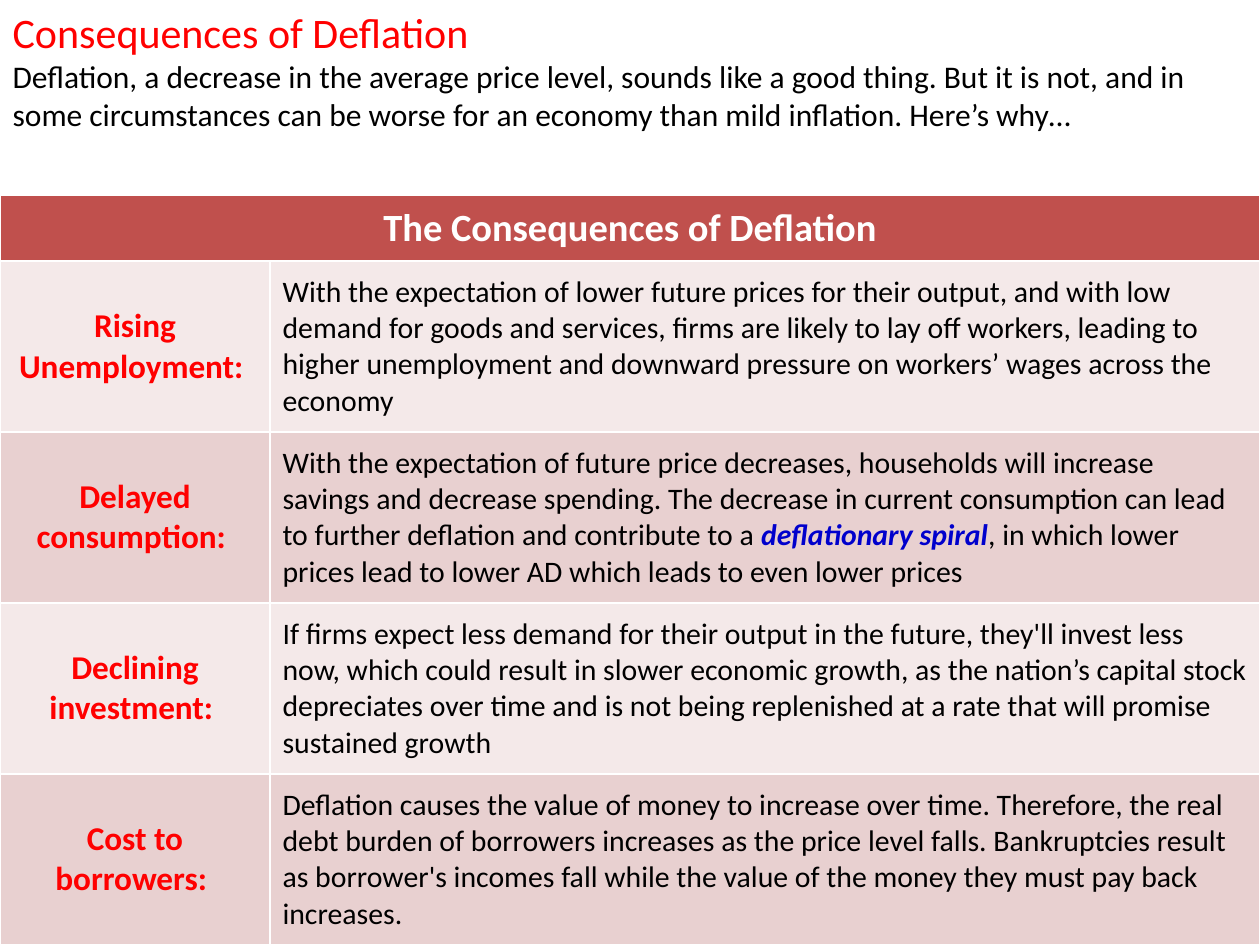
from lxml.etree import SubElement
from pptx import Presentation
from pptx.dml.color import RGBColor
from pptx.enum.text import MSO_ANCHOR, MSO_AUTO_SIZE, PP_ALIGN
from pptx.oxml.ns import qn
from pptx.util import Pt

PX = 914400 // 126
FONT = "Calibri"
RED, BLACK, WHITE, BLUE = "FF0000", "000000", "FFFFFF", "0000CC"
HEADER_FILL = "C0504D"
ROW_FILLS = ["F4E9E9", "E8D0D0"]

HEADING = "Consequences of Deflation"
INTRO = (
    "Deflation, a decrease in the average price level, sounds like a good thing. "
    "But it is not, and in some circumstances can be worse for an economy than "
    "mild inflation. Here’s why…"
)
TABLE_HEADER = "The Consequences of Deflation"
KEY_TERM = "deflationary spiral"
CONSEQUENCES = [
    (
        "Rising Unemployment: ",
        "With the expectation of lower future prices for their output, and with low "
        "demand for goods and services, firms are likely to lay off workers, leading "
        "to higher unemployment and downward pressure on workers’ wages across the economy",
    ),
    (
        "Delayed consumption: ",
        "With the expectation of future price decreases, households will increase "
        "savings and decrease spending. The decrease in current consumption can lead "
        "to further deflation and contribute to a deflationary spiral, in which lower "
        "prices lead to lower AD which leads to even lower prices",
    ),
    (
        "Declining investment: ",
        "If firms expect less demand for their output in the future, they'll invest "
        "less now, which could result in slower economic growth, as the nation’s "
        "capital stock depreciates over time and is not being replenished at a rate "
        "that will promise sustained growth",
    ),
    (
        "Cost to borrowers: ",
        "Deflation causes the value of money to increase over time. Therefore, the "
        "real debt burden of borrowers increases as the price level falls. "
        "Bankruptcies result as borrower's incomes fall while the value of the money "
        "they must pay back increases.",
    ),
]


def px(length):
    return length * PX


def color(value):
    return RGBColor.from_string(value)


def format_span(span, size, ink, bold=False, italic=False):
    span.font.name = FONT
    span.font.size = Pt(size)
    span.font.color.rgb = color(ink)
    span.font.bold = bold
    span.font.italic = italic


def write_para(para, text, size, ink, bold=False, align=PP_ALIGN.LEFT):
    para.text = text
    para.alignment = align
    format_span(para.runs[0], size, ink, bold)


def write_description(para, text):
    before, term, after = text.partition(KEY_TERM)
    write_para(para, before, 17, BLACK)
    if term:
        for part, ink, strong in [(term, BLUE, True), (after, BLACK, False)]:
            span = para.add_run()
            span.text = part
            format_span(span, 17, ink, strong, strong)


def style_cell(cell, fill):
    cell.vertical_anchor = MSO_ANCHOR.MIDDLE
    properties = cell._tc.get_or_add_tcPr()
    for side in ["lnL", "lnR", "lnT", "lnB"]:
        line = SubElement(properties, qn(f"a:{side}"), w=str(Pt(1)))
        solid = SubElement(line, qn("a:solidFill"))
        SubElement(solid, qn("a:srgbClr"), val=WHITE)
    cell.fill.solid()
    cell.fill.fore_color.rgb = color(fill)


def add_title(page):
    box = page.shapes.title
    box.left, box.top, box.width, box.height = px(0), px(0), px(1260), px(140)
    frame = box.text_frame
    frame.word_wrap = True
    frame.auto_size = MSO_AUTO_SIZE.NONE
    frame.vertical_anchor = MSO_ANCHOR.TOP
    write_para(frame.paragraphs[0], HEADING, 24, RED)
    write_para(frame.add_paragraph(), INTRO, 18, BLACK)


def add_consequences(page):
    row_count = len(CONSEQUENCES) + 1
    table = page.shapes.add_table(
        row_count, 2, px(0), px(195), px(1260), px(750)
    ).table
    for column, width in zip(table.columns, [270, 990]):
        column.width = px(width)
    for row, height in zip(table.rows, [66] + [171] * len(CONSEQUENCES)):
        row.height = px(height)

    header = table.cell(0, 0)
    header.merge(table.cell(0, 1))
    for cell in table.rows[0].cells:
        style_cell(cell, HEADER_FILL)
    write_para(header.text_frame.paragraphs[0], TABLE_HEADER, 22, WHITE, True,
               PP_ALIGN.CENTER)

    for index, (label, description) in enumerate(CONSEQUENCES):
        label_cell, description_cell = table.rows[index + 1].cells
        for cell in [label_cell, description_cell]:
            style_cell(cell, ROW_FILLS[index % 2])
        write_para(label_cell.text_frame.paragraphs[0], label, 19, RED, True,
                   PP_ALIGN.CENTER)
        write_description(description_cell.text_frame.paragraphs[0], description)


def main():
    deck = Presentation()
    deck.slide_width, deck.slide_height = px(1260), px(945)
    page = deck.slides.add_slide(deck.slide_layouts[5])
    add_title(page)
    add_consequences(page)
    deck.save("out.pptx")


if __name__ == "__main__":
    main()
